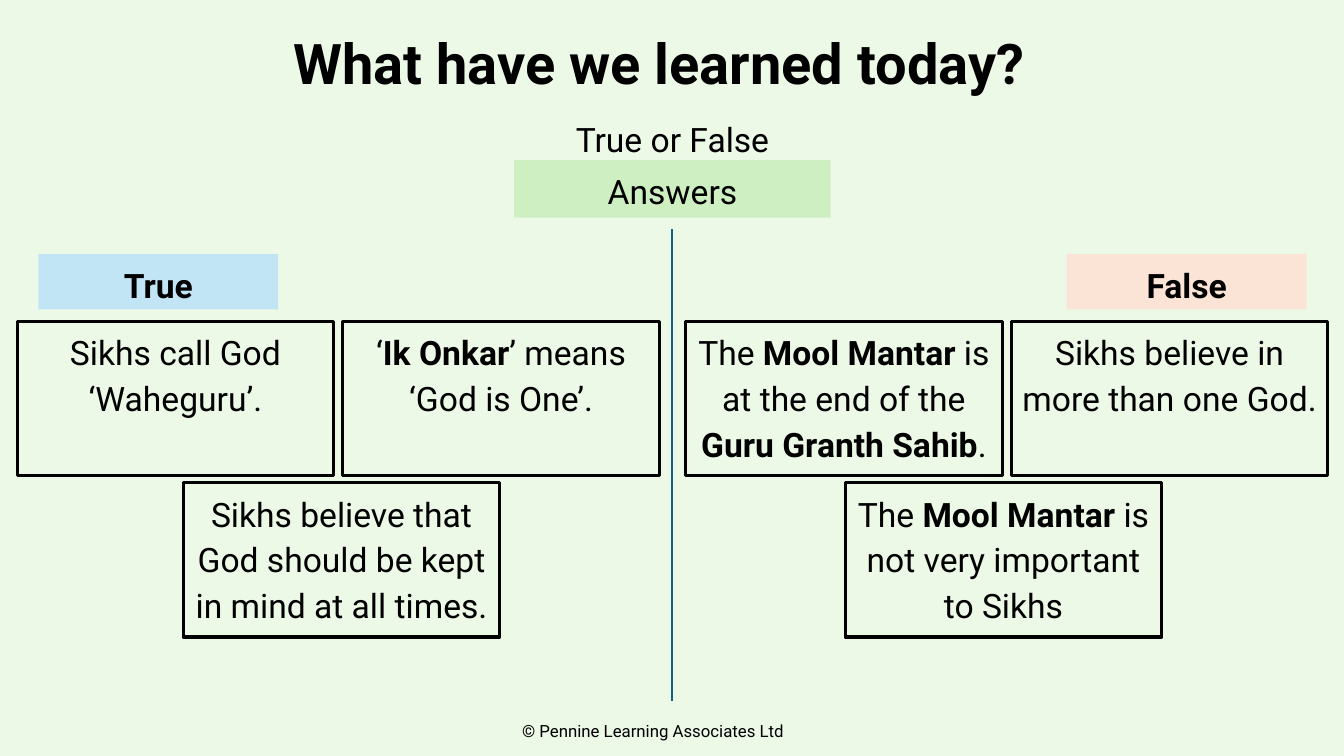
import pptx
import pptx.dml.color
import pptx.enum.shapes
import pptx.enum.text
import pptx.util

WIDTH, HEIGHT = 13.33, 7.5
FONT = "Roboto"
BLACK, BACKGROUND, DIVIDER = "000000", "ECF9E7", "156082"

TITLE = "What have we learned today?"
QUESTION = "True or False"
ANSWERS = "Answers"
FOOTER = "© Pennine Learning Associates Ltd"

HALVES = [
    {
        "heading": "**True**", "fill": "C1E5F5", "heading_left": 0.38, "cards_left": 0.17,
        "cards": [
            (0, 0, "Sikhs call God ‘Waheguru’."),
            (1, 0, "‘**Ik Onkar**’ means ‘God is One’."),
            (0.51, 1, "Sikhs believe that God should be kept in mind at all times."),
        ],
    },
    {
        "heading": "**False**", "fill": "FBE3D6", "heading_left": 10.58, "cards_left": 6.8,
        "cards": [
            (0, 0, "The **Mool Mantar **is at the end of the **Guru Granth Sahib**."),
            (1, 0, "Sikhs believe in more than one God."),
            (0.49, 1, "The **Mool Mantar **is not very important to Sikhs"),
        ],
    },
]

CARDS_TOP = 3.19
CARD_WIDTH, CARD_HEIGHT = 3.14, 1.53
COLUMN, ROW = 3.23, 1.6
HEADING_TOP, HEADING_WIDTH, HEADING_HEIGHT = 2.52, 2.38, 0.55


def color(value):
    return pptx.dml.color.RGBColor.from_string(value)


def write(box, text, size=24, align="CENTER", anchor="TOP", spacing=1.14):
    frame = box.text_frame
    frame.word_wrap = True
    frame.vertical_anchor = getattr(pptx.enum.text.MSO_ANCHOR, anchor)
    para = frame.paragraphs[0]
    para.alignment = getattr(pptx.enum.text.PP_ALIGN, align)
    para.line_spacing = spacing
    for index, part in enumerate(text.split("**")):
        if part:
            span = para.add_run()
            span.text = part
            span.font.name = FONT
            span.font.size = pptx.util.Pt(size)
            span.font.bold = index % 2 == 1
            span.font.color.rgb = color(BLACK)


def add_text(page, place, text, **layout):
    box = page.shapes.add_textbox(*map(pptx.util.Inches, place))
    write(box, text, **layout)


def add_panel(page, place, text, fill=None, line=None):
    box = page.shapes.add_shape(
        pptx.enum.shapes.MSO_SHAPE.RECTANGLE, *map(pptx.util.Inches, place))
    box.shadow.inherit = False
    if fill:
        box.fill.solid()
        box.fill.fore_color.rgb = color(fill)
    else:
        box.fill.background()
    if line:
        box.line.color.rgb = color(line)
        box.line.width = pptx.util.Pt(2.25)
    else:
        box.line.fill.background()
    write(box, text)


def add_divider(page, across, top, bottom):
    ends = map(pptx.util.Inches, (across, top, across, bottom))
    divider = page.shapes.add_connector(pptx.enum.shapes.MSO_CONNECTOR.STRAIGHT, *ends)
    divider.line.color.rgb = color(DIVIDER)
    divider.line.width = pptx.util.Pt(1.5)
    properties = divider.element.spPr
    properties.append(properties.makeelement(pptx.oxml.ns.qn("a:effectLst"), {}))


def main():
    deck = pptx.Presentation()
    deck.slide_width = pptx.util.Inches(WIDTH)
    deck.slide_height = pptx.util.Inches(HEIGHT)
    page = deck.slides.add_slide(deck.slide_layouts[6])
    page.background.fill.solid()
    page.background.fill.fore_color.rgb = color(BACKGROUND)

    add_text(page, (5.08, 7.1, 3.18, 0.3), FOOTER, size=12, align="LEFT", spacing=1.0)
    add_text(page, (-0.13, -0.07, WIDTH, 1.45), f"**{TITLE}**",
             size=40, anchor="MIDDLE", spacing=0.9)
    add_text(page, (5.35, 1.07, 2.64, 0.57), QUESTION)
    add_panel(page, (5.1, 1.59, CARD_WIDTH, 0.57), ANSWERS, fill="CEEFC1")

    for half in HALVES:
        place = (half["heading_left"], HEADING_TOP, HEADING_WIDTH, HEADING_HEIGHT)
        add_panel(page, place, half["heading"], fill=half["fill"])
        for column, row, text in half["cards"]:
            left = half["cards_left"] + column * COLUMN
            top = CARDS_TOP + row * ROW
            add_panel(page, (left, top, CARD_WIDTH, CARD_HEIGHT), text, line=BLACK)

    add_divider(page, WIDTH / 2, 2.27, 6.95)
    deck.save("out.pptx")


if __name__ == "__main__":
    main()
